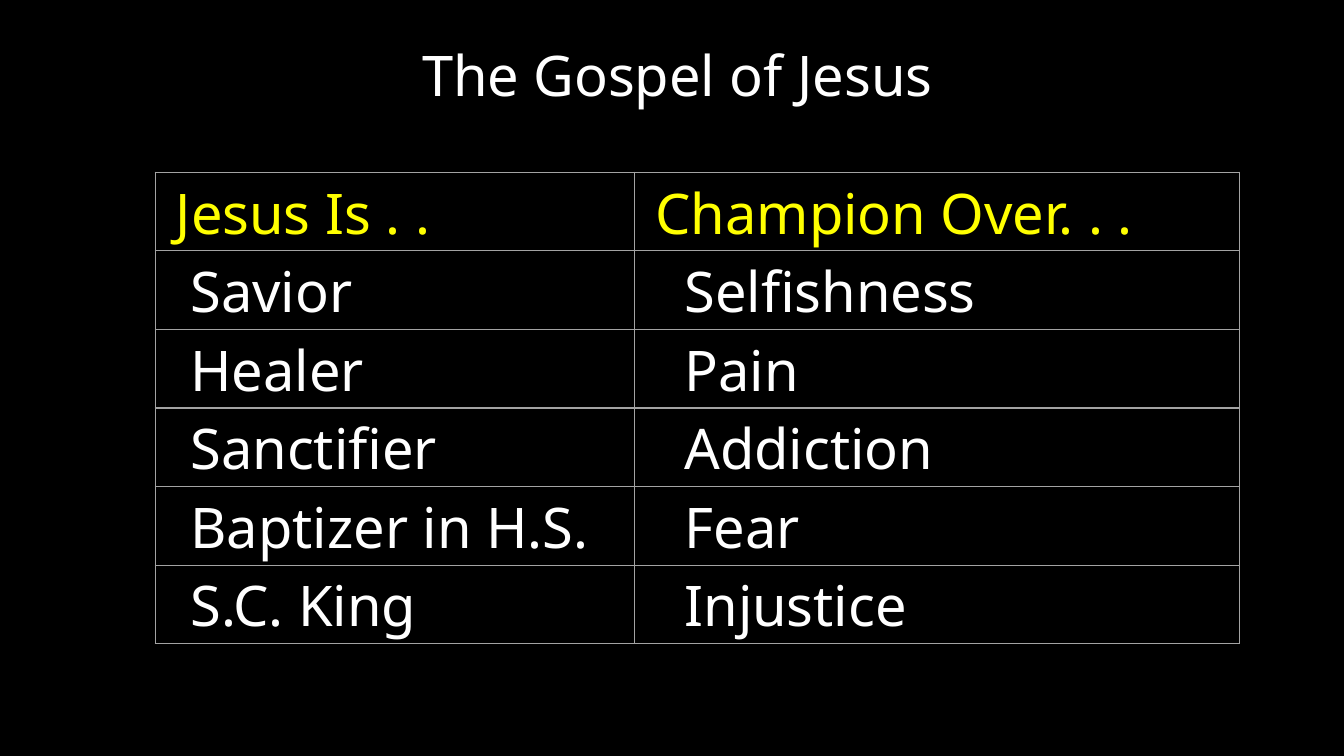
from dataclasses import dataclass

from lxml.etree import SubElement
from pptx import Presentation
from pptx.dml.color import RGBColor as RGB
from pptx.enum.text import MSO_ANCHOR as Anchor, MSO_AUTO_SIZE as AutoSize, PP_ALIGN as Align
from pptx.oxml.ns import qn
from pptx.util import Cm, Pt


@dataclass(frozen=True)
class Theme:
    font: str = "Noto Sans"
    size: int = 40
    background: str = "000000"
    text: str = "FFFFFF"
    heading: str = "FFFF00"
    border: str = "A3A3A3"
    border_width: int = 1


THEME = Theme()
TITLE = "The Gospel of Jesus"
ROWS = [
    ("Jesus Is . .", "Champion Over. . ."),
    ("Savior", "Selfishness"),
    ("Healer", "Pain"),
    ("Sanctifier", "Addiction"),
    ("Baptizer in H.S.", "Fear"),
    ("S.C. King", "Injustice"),
]
COLUMN_WIDTHS = (12.09, 15.24)
ROW_HEIGHT = 1.98
HEADING_INDENT = 0.52
BODY_INDENTS = (0.89, 1.25)


def write(tf, text, color, align):
    tf.text = text
    p = tf.paragraphs[0]
    p.alignment = align
    for r in p.runs:
        r.font.name = THEME.font
        r.font.size = Pt(THEME.size)
        r.font.color.rgb = RGB.from_string(color)


def add_title(s):
    title = s.shapes.title
    title.left, title.top = Cm(1.4), Cm(1.02)
    title.width, title.height = Cm(31.34), Cm(1.96)
    tf = title.text_frame
    tf.auto_size = AutoSize.NONE
    tf.vertical_anchor = Anchor.TOP
    tf.margin_top = tf.margin_bottom = 0
    write(tf, TITLE, THEME.text, Align.CENTER)


def add_borders(cell):
    tc_pr = cell._tc.get_or_add_tcPr()
    for i, side in enumerate(("a:lnL", "a:lnR", "a:lnT", "a:lnB")):
        ln = SubElement(tc_pr, qn(side), w=str(Pt(THEME.border_width)))
        fill = SubElement(ln, qn("a:solidFill"))
        SubElement(fill, qn("a:srgbClr"), val=THEME.border)
        tc_pr.insert(i, ln)


def fill_cell(cell, text, color, indent):
    cell.margin_left, cell.margin_right = Cm(indent), Cm(0.15)
    cell.margin_top, cell.margin_bottom = Cm(0.05), 0
    write(cell.text_frame, text, color, Align.LEFT)
    cell.fill.solid()
    cell.fill.fore_color.rgb = RGB.from_string(THEME.background)
    add_borders(cell)


def add_champion_table(s):
    frame = s.shapes.add_table(
        len(ROWS), len(COLUMN_WIDTHS), Cm(3.91), Cm(4.34),
        Cm(sum(COLUMN_WIDTHS)), Cm(ROW_HEIGHT * len(ROWS)))
    table = frame.table
    table.first_row = table.horz_banding = False
    for column, width in zip(table.columns, COLUMN_WIDTHS):
        column.width = Cm(width)
    for i, texts in enumerate(ROWS):
        table.rows[i].height = Cm(ROW_HEIGHT)
        for j, text in enumerate(texts):
            color = THEME.text if i else THEME.heading
            indent = BODY_INDENTS[j] if i else HEADING_INDENT
            fill_cell(table.cell(i, j), text, color, indent)


def main():
    prs = Presentation()
    prs.slide_width, prs.slide_height = Cm(33.87), Cm(19.05)
    s = prs.slides.add_slide(prs.slide_layouts.get_by_name("Title Only"))
    s.background.fill.solid()
    s.background.fill.fore_color.rgb = RGB.from_string(THEME.background)
    add_title(s)
    add_champion_table(s)
    prs.save("out.pptx")


if __name__ == "__main__":
    main()
